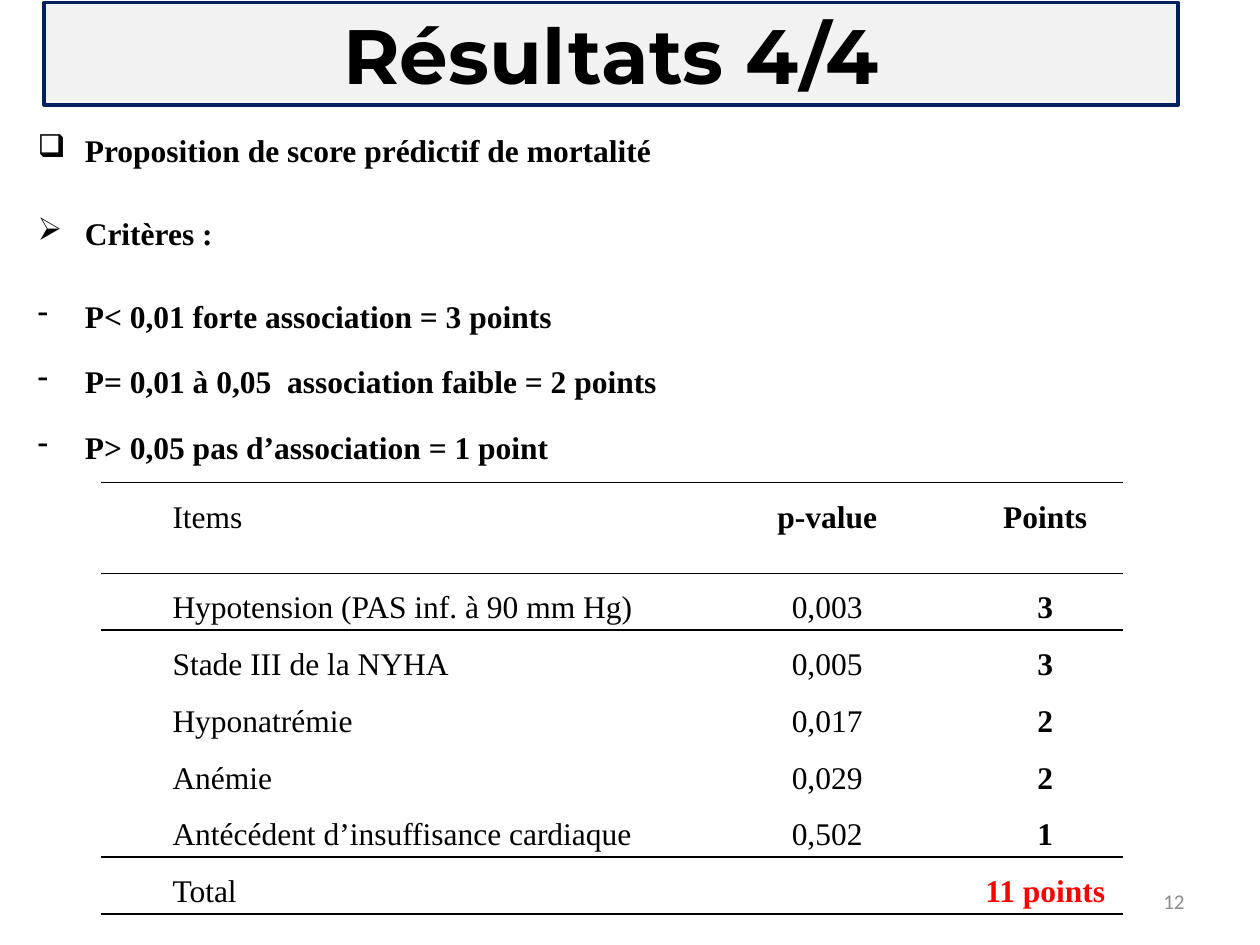
from dataclasses import dataclass

from lxml import etree
from pptx import Presentation
from pptx import util as u
from pptx.dml.color import RGBColor
from pptx.enum import text as t
from pptx.oxml import ns

SERIF = "Times New Roman"
NO_GRID_STYLE = "{2D5ABB26-0587-4C30-8999-92F81FD0307C}"


@dataclass
class Bullet:
    mark: str
    text: str
    after: float = 10


@dataclass
class ScoreRow:
    item: str
    p_value: str
    points: str
    height: float = 30.2
    lines: tuple = ()  # ruled edges, by XML tag
    bold: tuple = (False, False, True)
    points_color: str = "000000"


BULLETS = [
    Bullet("❑", "Proposition de score prédictif de mortalité"),
    Bullet("➢", "Critères : "),
    Bullet("-", "P< 0,01 forte association = 3 points ", 0),
    Bullet("-", "P= 0,01 à 0,05  association faible = 2 points ", 0),
    Bullet("-", "P> 0,05 pas d’association = 1 point "),
]
SCORES = [
    ScoreRow("Items", "p-value", "Points", 51.8, ("a:lnT", "a:lnB"), (False, True, True)),
    ScoreRow("Hypotension (PAS inf. à 90 mm Hg)", "0,003", "3", lines=("a:lnT",)),
    ScoreRow("Stade III de la NYHA", "0,005", "3"),
    ScoreRow("Hyponatrémie", "0,017", "2"),
    ScoreRow("Anémie", "0,029", "2"),
    ScoreRow("Antécédent d’insuffisance cardiaque", "0,502", "1", lines=("a:lnB",)),
    ScoreRow("Total", "", "11 points", lines=("a:lnT", "a:lnB"), points_color="FF0000"),
]
COLUMN_WIDTHS = (334.8, 124.6, 124.6)


def color(value: str) -> RGBColor:
    return RGBColor.from_string(value)


def style(para, size: float, face: str, ink: str, bold: bool, align) -> None:
    para.font.size = u.Pt(size)
    para.font.name = face
    para.font.bold = bold
    para.font.color.rgb = color(ink)
    para.alignment = align


def add_box(page, left: float, top: float, width: float, height: float):
    box = page.shapes.add_textbox(u.Pt(left), u.Pt(top), u.Pt(width), u.Pt(height))
    box.text_frame.word_wrap = True
    return box.text_frame


def set_bullet(para, mark: str, indent: float) -> None:
    props = para._p.get_or_add_pPr()
    props.set("marL", str(u.Pt(indent)))
    props.set("indent", str(-u.Pt(indent)))
    bullet = etree.Element(ns.qn("a:buChar"), char=mark)
    # Bullets come before the default run properties
    props.insert_element_before(bullet, "a:tabLst", "a:defRPr", "a:extLst")


def rule_cell(cell, edges: tuple) -> None:
    props = cell._tc.get_or_add_tcPr()
    for position, edge in enumerate(edges):
        line = etree.Element(ns.qn(edge), w=str(u.Pt(1)))
        fill = etree.SubElement(line, ns.qn("a:solidFill"))
        etree.SubElement(fill, ns.qn("a:srgbClr"), val="000000")
        props.insert(position, line)


def draw_title(page) -> None:
    title = page.shapes.title
    title.left, title.top = u.Pt(25.2), u.Pt(1.4)
    title.width, title.height = u.Pt(648), u.Pt(58.6)
    title.fill.solid()
    title.fill.fore_color.rgb = color("F2F2F2")
    title.line.color.rgb = color("002060")
    title.line.width = u.Pt(2)
    frame = title.text_frame
    frame.text = "Résultats 4/4"
    frame.auto_size = t.MSO_AUTO_SIZE.NONE
    frame.vertical_anchor = t.MSO_ANCHOR.MIDDLE
    style(frame.paragraphs[0], 44, "Montserrat", "000000", True, t.PP_ALIGN.CENTER)


def draw_bullets(page, bullets: list[Bullet]) -> None:
    frame = add_box(page, 14.4, 60.5, 681, 468.7)
    for index, bullet in enumerate(bullets):
        para = frame.add_paragraph() if index else frame.paragraphs[0]
        para.text = bullet.text
        para.line_spacing = 1.5
        para.space_before = u.Pt(5)
        para.space_after = u.Pt(bullet.after)
        style(para, 18, SERIF, "000000", True, t.PP_ALIGN.JUSTIFY)
        set_bullet(para, bullet.mark, 27)


def draw_table(page, scores: list[ScoreRow]) -> None:
    frame = page.shapes.add_table(
        len(scores), len(COLUMN_WIDTHS), u.Pt(57.6), u.Pt(275.8),
        u.Pt(sum(COLUMN_WIDTHS)), u.Pt(sum(row.height for row in scores)))
    table = frame.table
    table.first_row = table.horz_banding = False
    table._tbl.tblPr.find(ns.qn("a:tableStyleId")).text = NO_GRID_STYLE
    for column, width in zip(table.columns, COLUMN_WIDTHS):
        column.width = u.Pt(width)
    for line, score in zip(table.rows, scores):
        line.height = u.Pt(score.height)
        values = (score.item, score.p_value, score.points)
        inks = ("000000", "000000", score.points_color)
        for index, cell in enumerate(line.cells):
            cell.margin_left = cell.margin_right = u.Pt(5)
            cell.margin_top = cell.margin_bottom = 0
            cell.fill.background()
            rule_cell(cell, score.lines)
            para = cell.text_frame.paragraphs[0]
            para.text = values[index]
            para.line_spacing = 1.5
            align = t.PP_ALIGN.CENTER if index else t.PP_ALIGN.LEFT
            style(para, 18, SERIF, inks[index], score.bold[index], align)
            para._p.get_or_add_pPr().set("marL", str(u.Pt(36)))


def draw_page_number(page) -> None:
    frame = add_box(page, 516.2, 500.4, 167.8, 28.8)
    frame.vertical_anchor = t.MSO_ANCHOR.MIDDLE
    frame.text = "12"
    style(frame.paragraphs[0], 12, "Calibri", "8C8C8C", False, t.PP_ALIGN.RIGHT)


def main() -> None:
    deck = Presentation()
    deck.slide_width, deck.slide_height = u.Pt(720), u.Pt(540)
    page = deck.slides.add_slide(deck.slide_layouts.get_by_name("Title Only"))
    draw_title(page)
    draw_bullets(page, BULLETS)
    draw_table(page, SCORES)
    draw_page_number(page)
    deck.save("out.pptx")


if __name__ == "__main__":
    main()
